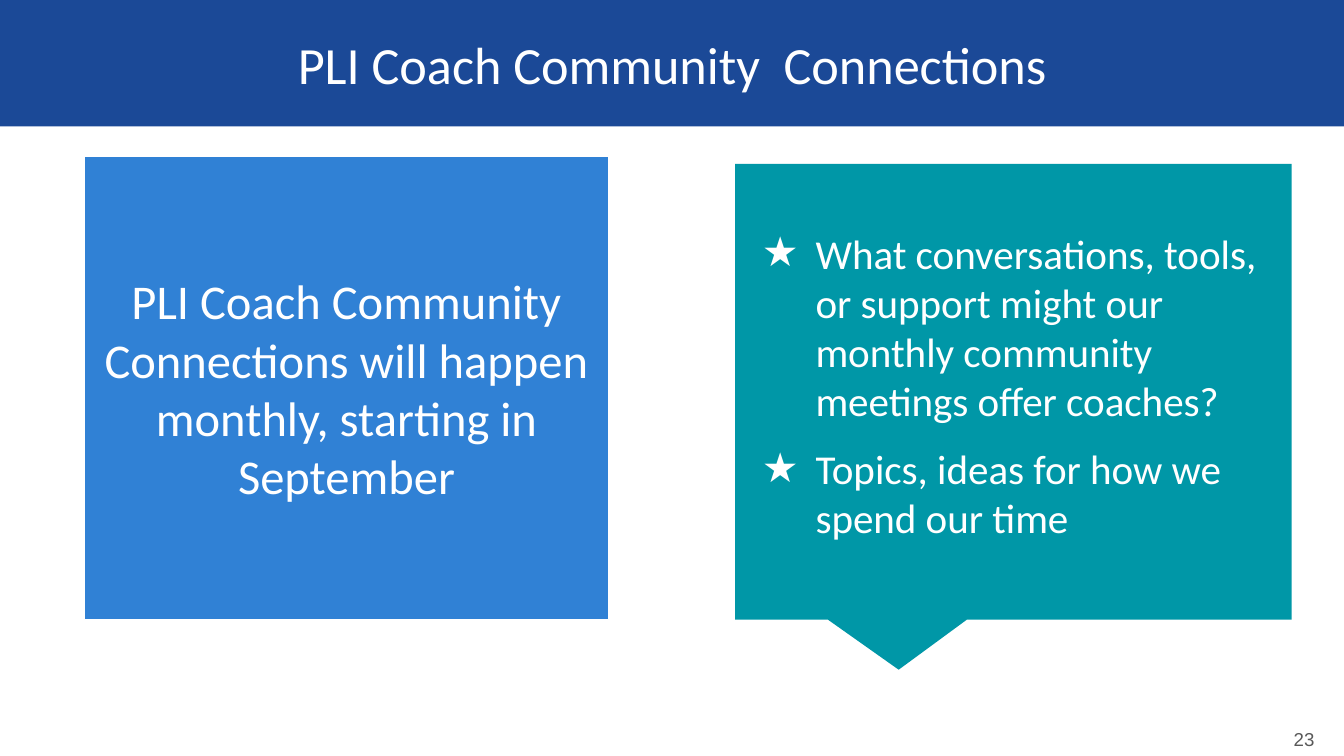
from lxml.etree import SubElement
from pptx import Presentation
from pptx.dml.color import RGBColor
from pptx.enum.shapes import MSO_SHAPE
from pptx.enum.text import MSO_ANCHOR, MSO_AUTO_SIZE, PP_ALIGN
from pptx.oxml.ns import qn
from pptx.util import Inches, Pt

TITLE = "PLI Coach Community  Connections"
ANNOUNCEMENT = "PLI Coach Community Connections will happen monthly, starting in September"
QUESTIONS = [
    "What conversations, tools, or support might our  monthly community meetings offer coaches?",
    "Topics, ideas for how we spend our time",
]
PAGE_NUMBER = "23"

SLIDE_WIDTH = 10
SLIDE_HEIGHT = SLIDE_WIDTH * 9 / 16
WHITE, NAVY, BLUE, TEAL, GREY = "FFFFFF", "1B4997", "0065CC", "0097A7", "595959"
BLUE_OPACITY = 81


def box(left, top, width, height):
    return [Inches(value) for value in (left, top, width, height)]


def set_fill(shape, color):
    shape.fill.solid()
    shape.fill.fore_color.rgb = RGBColor.from_string(color)


def write(shape, texts, size, alignment, insets, color=WHITE, font="Calibri"):
    """Put one paragraph per text in the shape, middle anchored; insets run left, top, right, bottom."""
    frame = shape.text_frame
    frame.word_wrap = True
    frame.auto_size = MSO_AUTO_SIZE.NONE
    frame.vertical_anchor = MSO_ANCHOR.MIDDLE
    (frame.margin_left, frame.margin_top,
     frame.margin_right, frame.margin_bottom) = box(*insets)
    for index, text in enumerate(texts):
        paragraph = frame.add_paragraph() if index else frame.paragraphs[0]
        paragraph.alignment = alignment
        run = paragraph.add_run()
        run.text = text
        run.font.name = font
        run.font.size = Pt(size)
        run.font.color.rgb = RGBColor.from_string(color)


def add_star_bullet(paragraph):
    paragraph.space_before = Pt(10)
    properties = paragraph._p.get_or_add_pPr()
    properties.set("marL", str(Inches(0.5)))
    properties.set("indent", str(Inches(-0.4)))
    bullet_color = SubElement(properties, qn("a:buClr"))
    SubElement(bullet_color, qn("a:srgbClr"), val=WHITE)
    SubElement(properties, qn("a:buFont"), typeface="Calibri")
    SubElement(properties, qn("a:buChar"), char="★")


def main():
    presentation = Presentation()
    presentation.slide_width = Inches(SLIDE_WIDTH)
    presentation.slide_height = Inches(SLIDE_HEIGHT)
    slide = presentation.slides.add_slide(presentation.slide_layouts[5])
    shapes = slide.shapes

    title = shapes.title
    title.left, title.top, title.width, title.height = box(0, 0, SLIDE_WIDTH, 0.94)
    set_fill(title, NAVY)
    write(title, [TITLE], 28, PP_ALIGN.CENTER, (0.1, 0.05, 0.1, 0.05))

    callout = shapes.add_shape(MSO_SHAPE.RECTANGULAR_CALLOUT, *box(5.47, 1.22, 4.14, 3.39))
    callout.adjustments[0], callout.adjustments[1] = -0.206, 0.61
    callout.shadow.inherit = False
    set_fill(callout, TEAL)
    callout.line.fill.background()
    write(callout, QUESTIONS, 22, PP_ALIGN.LEFT, (0.1, 0, 0.1, 0.1))
    for paragraph in callout.text_frame.paragraphs:
        add_star_bullet(paragraph)

    page_number = shapes.add_textbox(*box(9.16, 5.45, 0.62, 0.09))
    write(page_number, [PAGE_NUMBER], 10, PP_ALIGN.RIGHT, (0, 0, 0, 0), GREY, "Arial")

    announcement = shapes.add_shape(MSO_SHAPE.RECTANGLE, *box(0.63, 1.16, 3.9, 3.45))
    announcement.shadow.inherit = False
    set_fill(announcement, BLUE)
    fill_color = announcement._element.spPr.find(qn("a:solidFill")).find(qn("a:srgbClr"))
    SubElement(fill_color, qn("a:alpha"), val=str(BLUE_OPACITY * 1000))
    announcement.line.color.rgb = RGBColor.from_string(WHITE)
    announcement.line.width = Pt(0.75)
    write(announcement, [ANNOUNCEMENT], 26, PP_ALIGN.CENTER, (0.1, 0.1, 0.1, 0.1))

    presentation.save("out.pptx")


if __name__ == "__main__":
    main()
